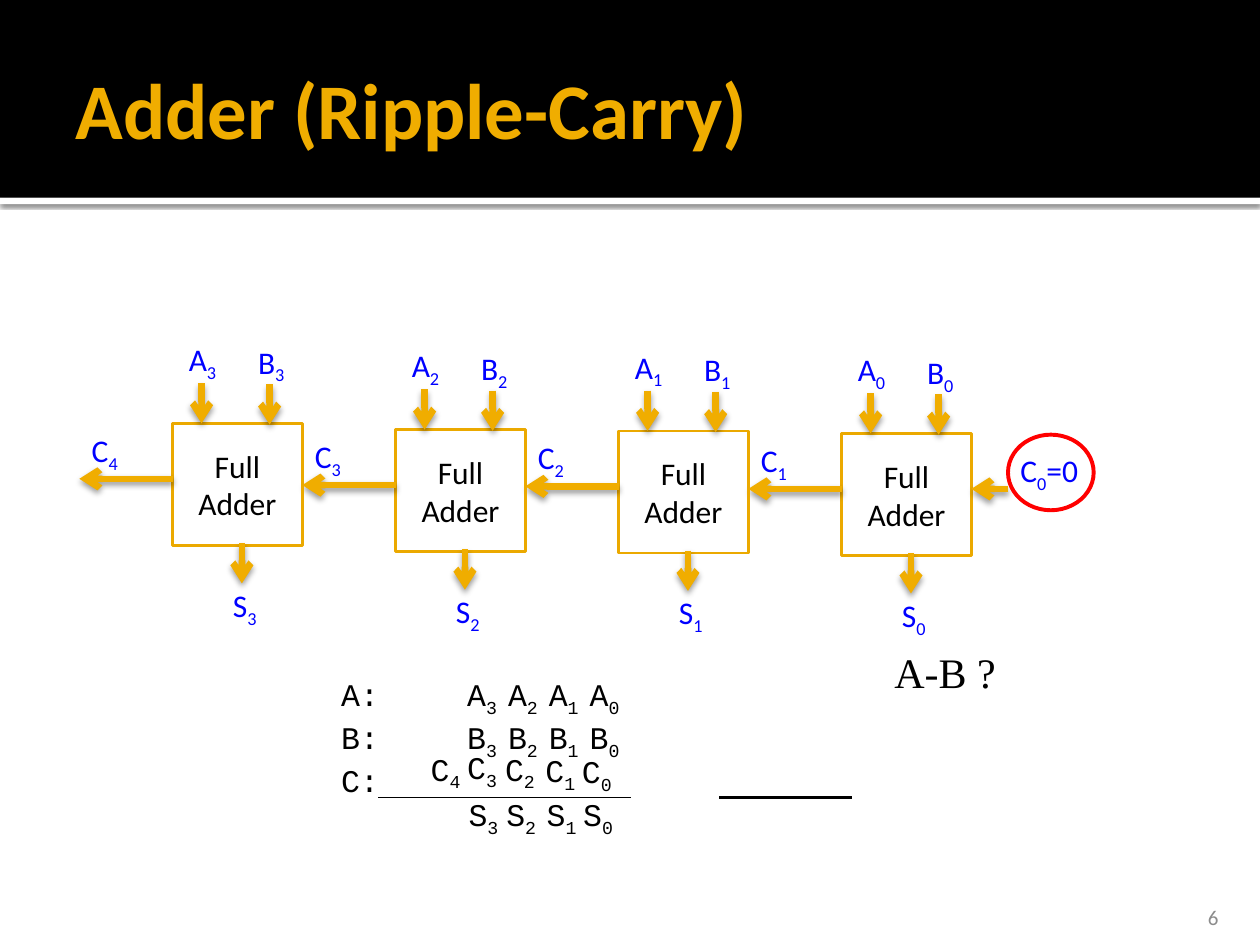
from pptx import Presentation
from pptx.dml.color import RGBColor
from pptx.enum.shapes import MSO_CONNECTOR, MSO_SHAPE
from pptx.enum.text import MSO_ANCHOR, MSO_AUTO_SIZE, PP_ALIGN
from pptx.oxml import parse_xml
from pptx.oxml.ns import nsdecls
from pptx.util import Inches, Pt

BLACK = RGBColor(0x00, 0x00, 0x00)
WHITE = RGBColor(0xFF, 0xFF, 0xFF)
GOLD = RGBColor(0xF0, 0xAD, 0x00)
DARK_GOLD = RGBColor(0xEB, 0xA9, 0x00)
BLUE = RGBColor(0x00, 0x00, 0xFF)
RED = RGBColor(0xFF, 0x00, 0x00)
GRAY = RGBColor(0x8C, 0x8C, 0x8C)

SHADOW = (
    f'<a:effectLst {nsdecls("a")}><a:outerShdw blurRad="{{}}" dist="{{}}" dir="5400000" '
    'rotWithShape="0"><a:srgbClr val="000000"><a:alpha val="{}"/></a:srgbClr>'
    '</a:outerShdw></a:effectLst>'
)


def add_text(x, y, w, h, lines, font="Calibri", size=18, color=BLUE):
    """Each line is a list of strings; every second one is a subscript."""
    tb = s.shapes.add_textbox(Inches(x), Inches(y), Inches(w), Inches(h))
    tf = tb.text_frame
    tf.word_wrap = False
    tf.auto_size = MSO_AUTO_SIZE.SHAPE_TO_FIT_TEXT
    for i, parts in enumerate(lines):
        p = tf.add_paragraph() if i else tf.paragraphs[0]
        for j, part in enumerate(parts):
            r = p.add_run()
            r.text = part
            r.font.name, r.font.size = font, Pt(size)
            r.font.color.rgb = color
            if j % 2:
                r.font._element.set("baseline", "-25000")
    return tf


def add_line(x1, y1, x2, y2, color=GOLD, width=3.78, arrow=True):
    c = s.shapes.add_connector(
        MSO_CONNECTOR.STRAIGHT, Inches(x1), Inches(y1), Inches(x2), Inches(y2))
    c.line.color.rgb = color
    c.line.width = Pt(width)
    if arrow:
        c.line._get_or_add_ln().append(
            parse_xml(f'<a:tailEnd {nsdecls("a")} type="arrow"/>'))
        effect = SHADOW.format(Pt(3.5), Pt(2), 38000)
    else:
        effect = f'<a:effectLst {nsdecls("a")}/>'
    c.element.spPr.append(parse_xml(effect))


prs = Presentation()
prs.slide_width, prs.slide_height = Inches(10), Inches(7.5)
s = prs.slides.add_slide(prs.slide_layouts[5])

# Header band with a white rule below it
for top, height, color in [(1.57, 0.05, WHITE), (0, 1.57, BLACK)]:
    band = s.shapes.add_shape(
        MSO_SHAPE.RECTANGLE, 0, Inches(top), Inches(10), Inches(height))
    band.fill.solid()
    band.fill.fore_color.rgb = color
    band.line.fill.background()
    if color == WHITE:
        band.element.spPr.append(parse_xml(SHADOW.format(Pt(2.5), Pt(0.8), 60000)))
    else:
        band.shadow.inherit = False

# Title, brought in front of the band
title = s.shapes.title
s.shapes.element.append(title.element)
title.left, title.top = Inches(0.5), Inches(0.17)
title.width, title.height = Inches(9), Inches(1.37)
tf = title.text_frame
tf.text = "Adder (Ripple-Carry)"
tf.vertical_anchor = MSO_ANCHOR.MIDDLE
tf.margin_right = Inches(0.05)
p = tf.paragraphs[0]
p.alignment = PP_ALIGN.LEFT
f = p.runs[0].font
f.name, f.size, f.bold = "Calibri", Pt(45), True
f.color.rgb = GOLD

# Slide number
tf = add_text(8.97, 7.08, 0.8, 0.3, [["6"]], size=12, color=GRAY)
tf.auto_size = MSO_AUTO_SIZE.NONE
tf.word_wrap = True
tf.vertical_anchor = MSO_ANCHOR.BOTTOM
tf.margin_bottom = 0
tf.paragraphs[0].alignment = PP_ALIGN.RIGHT

# Four full adders, bit 0 at the right
for bit, y in enumerate([3.44, 3.42, 3.41, 3.36]):
    x = 6.68 - 1.77 * bit
    box = s.shapes.add_shape(
        MSO_SHAPE.RECTANGLE, Inches(x), Inches(y), Inches(1.03), Inches(0.97))
    box.shadow.inherit = False
    box.fill.background()
    box.line.color.rgb = DARK_GOLD
    box.line.width = Pt(1.5)
    tf = box.text_frame
    tf.text = "Full\nAdder"
    tf.vertical_anchor = MSO_ANCHOR.MIDDLE
    for p in tf.paragraphs:
        p.alignment = PP_ALIGN.CENTER
        f = p.runs[0].font
        f.name, f.size = "Calibri", Pt(18)
        f.color.rgb = BLACK

    add_line(x + 0.23, y - 0.32, x + 0.23, y)
    add_line(x + 0.77, y - 0.31, x + 0.77, y + 0.01)
    add_line(x, y + 0.44, x - 0.74, y + 0.44)
    add_line(x + 0.55, y + 0.95, x + 0.55, y + 1.27)
    for letter, n, dx, dy in [("B", bit, 0.58, -0.69), ("A", bit, 0.03, -0.71),
                              ("C", bit + 1, -0.74, 0.01), ("S", bit, 0.38, 1.24)]:
        add_text(x + dx, y + dy, 0.43, 0.4, [[letter, str(n)]])

# Carry in, circled
add_line(8, 3.88, 7.71, 3.88)
add_text(8, 3.53, 0.68, 0.4, [["C", "0", "=0"]])
ring = s.shapes.add_shape(
    MSO_SHAPE.OVAL, Inches(8), Inches(3.45), Inches(0.68), Inches(0.6))
ring.shadow.inherit = False
ring.fill.background()
ring.line.color.rgb = RED
ring.line.width = Pt(2.25)

# Question
add_text(7, 5.08, 1.02, 0.5, [["A-B ?"]], "Times New Roman", 24, BLACK)

# Column addition
rows = [[f"{v}:\t\t{v}", "3 ", v, "2 ", v, "1 ", v, "0"] for v in "AB"]
tf = add_text(2.61, 5.31, 5.06, 1.31, rows + [["C:"]], "Courier New", 18, BLACK)
tf.word_wrap = True
for p in tf.paragraphs:
    p._p.get_or_add_pPr().append(parse_xml(
        f'<a:tabLst {nsdecls("a")}><a:tab pos="{Inches(0.5)}" algn="l"/>'
        f'<a:tab pos="{Inches(1)}" algn="l"/></a:tabLst>'))

for letter, n, x, y in [
        ("C", 4, 3.32, 5.9), ("C", 3, 3.61, 5.89), ("C", 2, 3.91, 5.9),
        ("C", 1, 4.23, 5.91), ("C", 0, 4.52, 5.92),
        ("S", 3, 3.62, 6.26), ("S", 2, 3.92, 6.26),
        ("S", 1, 4.24, 6.26), ("S", 0, 4.53, 6.26)]:
    add_text(x, y, 0.45, 0.4, [[letter, str(n)]], "Courier New", 18, BLACK)

# Sum rule and blank answer rule
add_line(3, 6.33, 5.01, 6.33, BLACK, 1, arrow=False)
add_line(5.71, 6.33, 6.76, 6.33, BLACK, 1.5, arrow=False)

prs.save("out.pptx")
